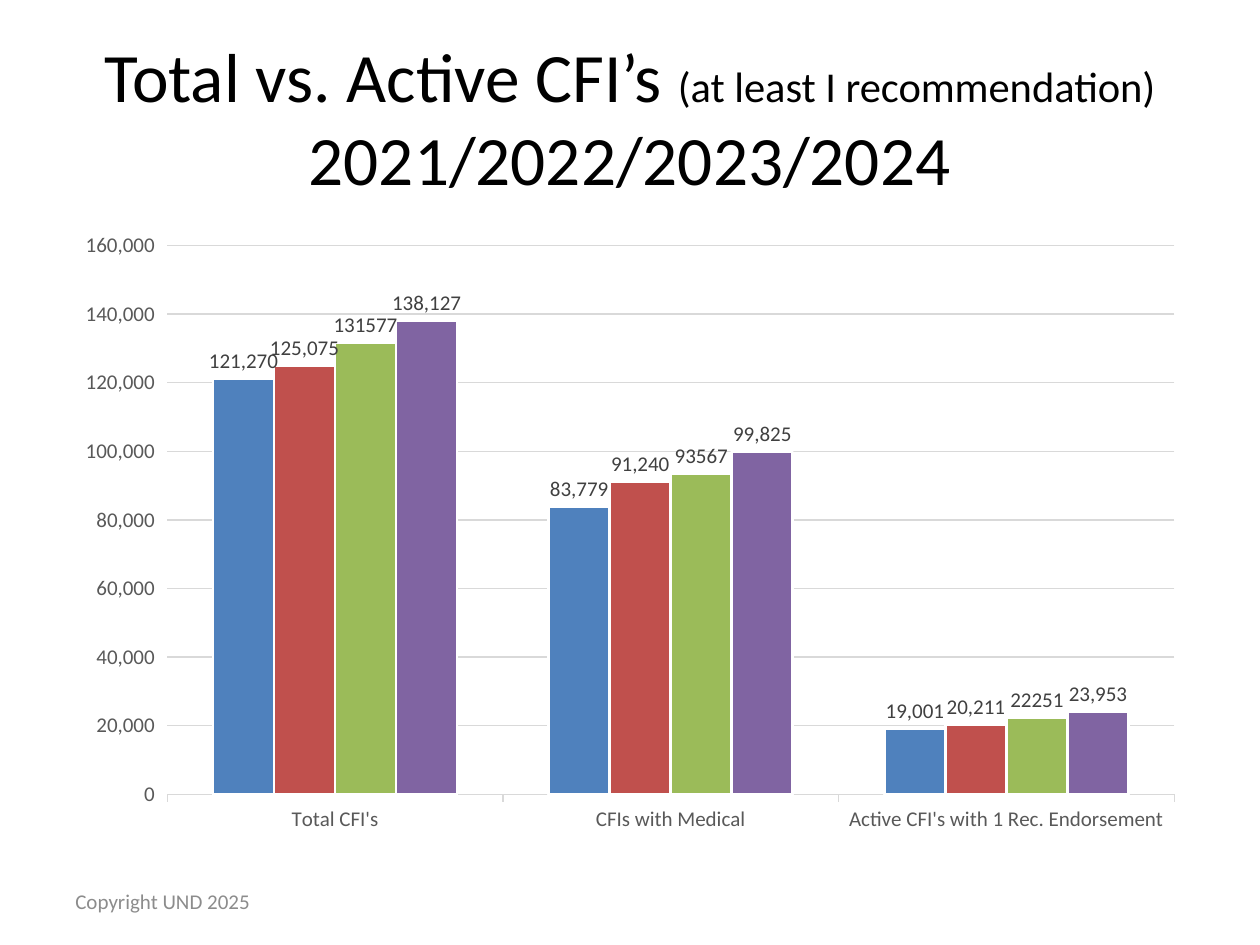
import pptx
import pptx.chart.data
import pptx.dml.color
import pptx.enum.chart
import pptx.enum.text
import pptx.util
from pptx.util import Inches

FONT = "Calibri"
COLORS = {
    "title": "000000",
    "axis_text": "595959",
    "rule": "D9D9D9",
    "value_label": "404040",
    "bar_edge": "FFFFFF",
    "footer": "8C8C8C",
}
CATEGORIES = ["Total CFI's", "CFIs with Medical", "Active CFI's with 1 Rec. Endorsement"]
# name, values, fill, label number format
SERIES = [
    ("Series 1", (121270, 83779, 19001), "4F81BD", "#,##0"),
    ("Series 2", (125075, 91240, 20211), "C0504D", "#,##0"),
    ("Series 3", (131577, 93567, 22251), "9BBB59", "General"),
    ("Series 4", (138127, 99825, 23953), "8064A2", "#,##0"),
]


def rgb(hex_color):
    return pptx.dml.color.RGBColor.from_string(hex_color)


def style_font(font, size, color):
    font.name = FONT
    font.size = pptx.util.Pt(size)
    font.color.rgb = rgb(color)


def style_line(line, color, width):
    line.color.rgb = rgb(color)
    line.width = pptx.util.Pt(width)


def add_title(slide, left, top, width, height):
    title = slide.shapes.title
    title.left, title.top, title.width, title.height = left, top, width, height
    frame = title.text_frame
    frame.word_wrap = True
    frame.auto_size = pptx.enum.text.MSO_AUTO_SIZE.NONE
    frame.vertical_anchor = pptx.enum.text.MSO_ANCHOR.MIDDLE
    heading = frame.paragraphs[0]
    heading.alignment = pptx.enum.text.PP_ALIGN.CENTER
    for words, size in (
        ("Total vs. Active CFI’s ", 39.6),
        ("(at least I recommendation)", 24.3),
        (" 2021/2022/2023/2024", 39.6),
    ):
        run = heading.add_run()
        run.text = words
        style_font(run.font, size, COLORS["title"])


def style_axes(chart):
    counts, groups = chart.value_axis, chart.category_axis
    for axis in (counts, groups):
        style_font(axis.tick_labels.font, 12, COLORS["axis_text"])
        axis.major_tick_mark = pptx.enum.chart.XL_TICK_MARK.OUTSIDE
    style_line(groups.format.line, COLORS["rule"], 0.75)
    counts.format.line.fill.background()
    counts.minimum_scale, counts.maximum_scale, counts.major_unit = 0, 160000, 20000
    counts.has_major_gridlines = True
    style_line(counts.major_gridlines.format.line, COLORS["rule"], 0.75)
    counts.tick_labels.number_format = "#,##0"
    counts.tick_labels.number_format_is_linked = False


def style_series(series, fill, number_format):
    series.format.fill.solid()
    series.format.fill.fore_color.rgb = rgb(fill)
    style_line(series.format.line, COLORS["bar_edge"], 1.5)
    labels = series.data_labels
    labels.show_value = True
    labels.position = pptx.enum.chart.XL_LABEL_POSITION.OUTSIDE_END
    labels.number_format = number_format
    labels.number_format_is_linked = False
    style_font(labels.font, 12, COLORS["value_label"])


def add_instructor_chart(slide, left, top, width, height):
    data = pptx.chart.data.CategoryChartData()
    data.categories = CATEGORIES
    for name, values, _, _ in SERIES:
        data.add_series(name, values)
    chart = slide.shapes.add_chart(
        pptx.enum.chart.XL_CHART_TYPE.COLUMN_CLUSTERED, left, top, width, height, data
    ).chart
    style_font(chart.font, 10, COLORS["title"])
    chart.has_title = False
    chart.has_legend = False
    plot = chart.plots[0]
    plot.vary_by_categories = False
    plot.gap_width = 150
    plot.overlap = 0
    style_axes(chart)
    for series, (_, _, fill, number_format) in zip(plot.series, SERIES):
        style_series(series, fill, number_format)


def add_footer(slide, left, top, width, height):
    frame = slide.shapes.add_textbox(left, top, width, height).text_frame
    frame.word_wrap = True
    frame.vertical_anchor = pptx.enum.text.MSO_ANCHOR.MIDDLE
    copyright_line = frame.paragraphs[0]
    copyright_line.text = "Copyright UND 2025"
    style_font(copyright_line.font, 12, COLORS["footer"])


def main():
    deck = pptx.Presentation()
    deck.slide_width, deck.slide_height = Inches(10), Inches(7.5)
    slide = deck.slides.add_slide(deck.slide_layouts.get_by_name("Title Only"))
    margin, content_width = Inches(0.5), Inches(9)
    add_title(slide, margin, Inches(0.3), content_width, Inches(1.25))
    add_instructor_chart(slide, margin, Inches(1.75), content_width, Inches(4.95))
    add_footer(slide, margin, Inches(6.95), Inches(2.33), Inches(0.4))
    deck.save("out.pptx")


if __name__ == "__main__":
    main()
